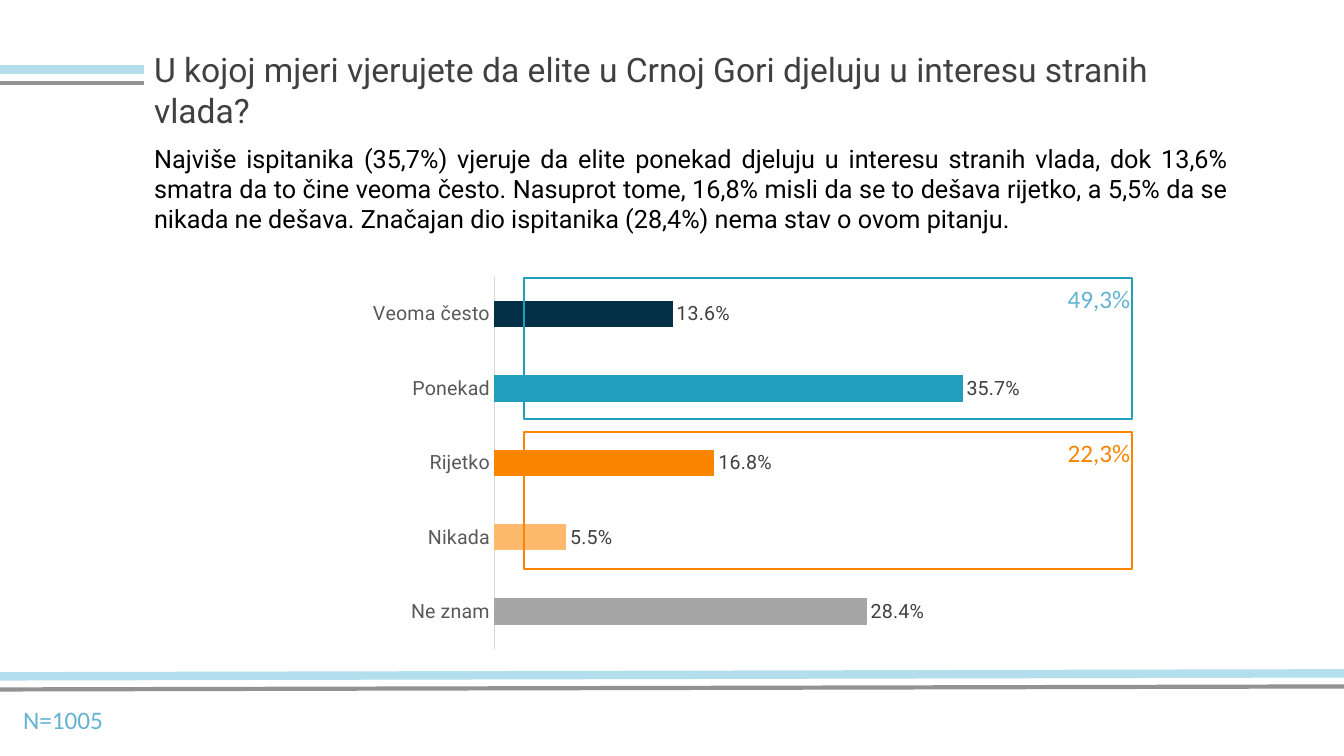
from dataclasses import dataclass

from lxml import etree
from pptx import Presentation
from pptx import util as u
from pptx.chart import data as cd
from pptx.dml.color import RGBColor
from pptx.enum import chart as ce
from pptx.enum import shapes, text
from pptx.oxml import parse_xml
from pptx.oxml.ns import nsdecls, qn


@dataclass(frozen=True)
class Theme:
    head: str = "Roboto"
    note: str = "Calibri"
    title: int = 24
    body: int = 18
    small: int = 14
    black: str = "000000"
    dark: str = "404040"
    mid: str = "595959"
    gray: str = "929294"
    rule: str = "D9D9D9"
    pale: str = "B2DEED"
    sky: str = "64B3D3"
    teal: str = "219EBC"
    navy: str = "023047"
    amber: str = "FB8500"
    peach: str = "FFB96D"
    ash: str = "A6A6A6"


T = Theme()


@dataclass(frozen=True)
class Label:
    words: str
    left: float
    top: float
    width: float
    height: float
    color: str
    size: int = T.body
    font: str = T.note
    align: text.PP_ALIGN = text.PP_ALIGN.LEFT


@dataclass(frozen=True)
class Stripe:
    start: float
    end: float
    right: float
    color: str
    weight: float


@dataclass(frozen=True)
class Frame:
    total: str
    top: float
    height: float
    color: str
    ink: str


@dataclass(frozen=True)
class Bar:
    name: str
    value: float
    color: str


WIDE = 13.33
LABELS = [
    Label("U kojoj mjeri vjerujete da elite u Crnoj Gori djeluju u interesu "
          "stranih vlada?", 1.43, 0.44, 10.7, 0.5, T.dark, T.title, T.head),
    Label("Najviše ispitanika (35,7%) vjeruje da elite ponekad djeluju u "
          "interesu stranih vlada, dok 13,6% smatra da to čine veoma često. "
          "Nasuprot tome, 16,8% misli da se to dešava rijetko, a 5,5% da se "
          "nikada ne dešava. Značajan dio ispitanika (28,4%) nema stav o ovom "
          "pitanju.", 1.43, 1.37, 10.85, 1.01, T.black, T.body, T.head,
          text.PP_ALIGN.JUSTIFY),
    Label("N=1005", 0.13, 6.94, 1.05, 0.4, T.sky),
]
STRIPES = [
    Stripe(6.84, 6.81, WIDE, T.gray, 3),
    Stripe(6.71, 6.68, WIDE, T.pale, 6),
    Stripe(0.82, 0.82, 1.43, T.gray, 3),
    Stripe(0.69, 0.69, 1.43, T.pale, 6),
]
FRAMES = [
    Frame("49,3%", 2.76, 1.4, T.teal, T.sky),
    Frame("22,3%", 4.29, 1.36, T.amber, T.amber),
]
BARS = [
    Bar("Veoma često", 0.136, T.navy),
    Bar("Ponekad", 0.357, T.teal),
    Bar("Rijetko", 0.168, T.amber),
    Bar("Nikada", 0.055, T.peach),
    Bar("Ne znam", 0.284, T.ash),
]
PLOT = {"x": 0.214, "y": 0.065, "w": 0.758, "h": 0.898}


def style(font, size: int, color: str, face: str) -> None:
    font.size = u.Pt(size)
    font.name = face
    font.color.rgb = RGBColor.from_string(color)


def add_label(slide, label: Label) -> None:
    box = slide.shapes.add_textbox(*map(
        u.Inches, (label.left, label.top, label.width, label.height)))
    frame = box.text_frame
    frame.word_wrap = True
    frame.text = label.words
    par = frame.paragraphs[0]
    par.alignment = label.align
    style(par.runs[0].font, label.size, label.color, label.font)


def add_stripe(slide, stripe: Stripe) -> None:
    line = slide.shapes.add_connector(
        shapes.MSO_CONNECTOR.STRAIGHT, 0, u.Inches(stripe.start),
        u.Inches(stripe.right), u.Inches(stripe.end))
    line.line.color.rgb = RGBColor.from_string(stripe.color)
    line.line.width = u.Pt(stripe.weight)
    etree.SubElement(line.element.spPr, qn("a:effectLst"))


def add_frame(slide, frame: Frame) -> None:
    box = slide.shapes.add_shape(
        shapes.MSO_SHAPE.RECTANGLE,
        *map(u.Inches, (5.2, frame.top, 6.03, frame.height)))
    box.shadow.inherit = False
    box.fill.background()
    box.line.color.rgb = RGBColor.from_string(frame.color)
    box.line.width = u.Pt(1.5)


def set_plot(chart) -> None:
    """Fix the inner plot area as fractions of the chart."""
    area = chart.element.find(".//" + qn("c:plotArea"))
    for old in area.findall(qn("c:layout")):
        area.remove(old)
    modes = "".join(f'<c:{k}Mode val="edge"/>' for k in "xy")
    sizes = "".join(f'<c:{k} val="{v}"/>' for k, v in PLOT.items())
    area.insert(0, parse_xml(
        f'<c:layout {nsdecls("c")}><c:manualLayout>'
        f'<c:layoutTarget val="inner"/>{modes}{sizes}'
        '</c:manualLayout></c:layout>'))


def add_bars(slide, bars: list[Bar]) -> None:
    data = cd.CategoryChartData(number_format="0.0%")
    data.categories = [bar.name for bar in bars]
    data.add_series("Series 1", [bar.value for bar in bars])
    chart = slide.shapes.add_chart(
        ce.XL_CHART_TYPE.BAR_CLUSTERED,
        *map(u.Inches, (3.43, 2.48, 6.87, 4.11)), data).chart
    chart.has_legend = False
    chart.has_title = False
    style(chart.font, T.small, T.black, T.head)
    set_plot(chart)

    cats = chart.category_axis
    cats.reverse_order = True
    cats.major_tick_mark = ce.XL_TICK_MARK.NONE
    cats.format.line.color.rgb = RGBColor.from_string(T.rule)
    cats.format.line.width = u.Pt(0.75)
    style(cats.tick_labels.font, T.small, T.mid, T.head)
    vals = chart.value_axis
    vals.visible = False
    vals.has_major_gridlines = False
    vals.minimum_scale, vals.maximum_scale = 0, 0.4

    plot = chart.plots[0]
    plot.gap_width = 182
    plot.vary_by_categories = False
    series = plot.series[0]
    series.format.fill.solid()
    series.format.fill.fore_color.rgb = RGBColor.from_string(T.teal)
    for i, bar in enumerate(bars):
        fill = series.points[i].format.fill
        fill.solid()
        fill.fore_color.rgb = RGBColor.from_string(bar.color)
    marks = series.data_labels
    marks.show_value = True
    marks.position = ce.XL_LABEL_POSITION.OUTSIDE_END
    marks.number_format = "0.0%"
    marks.number_format_is_linked = False
    style(marks.font, T.small, T.dark, T.head)


def main() -> None:
    deck = Presentation()
    deck.slide_width, deck.slide_height = u.Inches(WIDE), u.Inches(7.5)
    slide = deck.slides.add_slide(deck.slide_layouts[6])
    for stripe in STRIPES:
        add_stripe(slide, stripe)
    for label in LABELS:
        add_label(slide, label)
    add_bars(slide, BARS)
    for frame in FRAMES:
        add_frame(slide, frame)
        add_label(slide, Label(frame.total, 10.49, frame.top, 1.65, 0.4,
                               frame.ink))
    deck.save("out.pptx")


if __name__ == "__main__":
    main()
